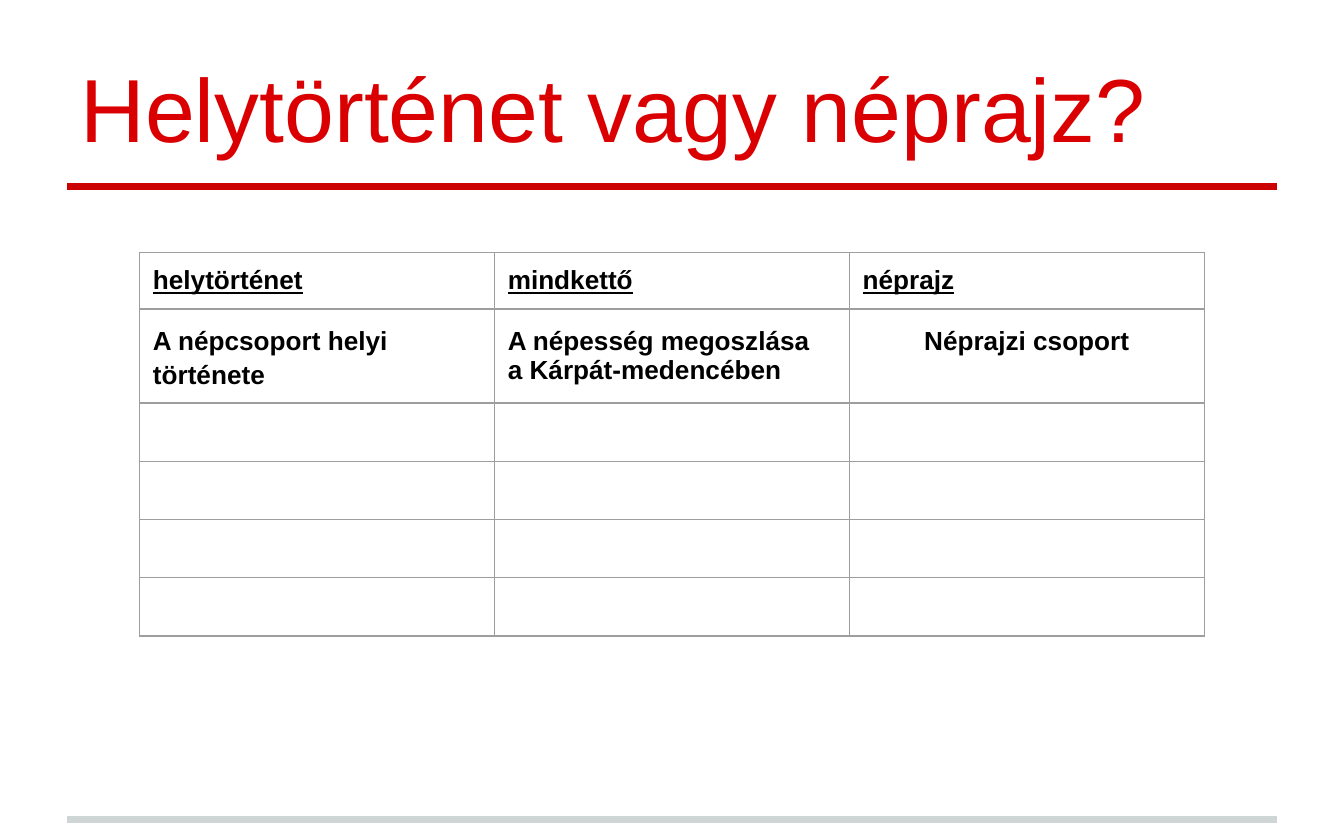
from lxml import etree
from pptx import Presentation
from pptx import util as u
from pptx.dml.color import RGBColor
from pptx.enum import shapes, text
from pptx.oxml import parse_xml
from pptx.oxml.ns import nsdecls, qn

TITLE_RED = RGBColor(0xDA, 0x00, 0x02)
RULE_RED = RGBColor(0xCC, 0x02, 0x02)
RULE_GREY = RGBColor(0xCF, 0xD4, 0xD4)
BORDER_GREY = RGBColor(0x9E, 0x9E, 0x9E)
BLACK = RGBColor(0x00, 0x00, 0x00)
FONT = "Arial"
MARGIN = u.Cm(1.27)
CONTENT_WIDTH = u.Cm(22.86)
PADDING = u.Cm(0.25)
CELL_SIZE = u.Pt(14)
ROW_COUNT = 6
COLUMN_COUNT = 3


def add_text(paragraph, words, size, color, bold=False, underline=False):
    run = paragraph.add_run()
    run.text = words
    run.font.name = FONT
    run.font.size = size
    run.font.color.rgb = color
    run.font.bold = bold
    run.font.underline = underline


def add_borders(cell):
    properties = cell._tc.get_or_add_tcPr()
    for side in ("lnL", "lnR", "lnT", "lnB"):
        properties.append(parse_xml(
            f'<a:{side} {nsdecls("a")} w="{u.Pt(0.75)}"><a:solidFill>'
            f'<a:srgbClr val="{BORDER_GREY}"/></a:solidFill></a:{side}>'))


presentation = Presentation()
presentation.slide_width = u.Cm(25.4)
presentation.slide_height = u.Cm(15.88)
slide = presentation.slides.add_slide(presentation.slide_layouts[5])

for top, color in ((u.Cm(15.49), RULE_GREY), (u.Cm(3.53), RULE_RED)):
    rule = slide.shapes.add_connector(
        shapes.MSO_CONNECTOR.STRAIGHT, MARGIN, top, MARGIN + CONTENT_WIDTH, top)
    rule.line.color.rgb = color
    rule.line.width = u.Pt(4)
    etree.SubElement(rule._element.spPr, qn("a:effectLst"))

title = slide.shapes.title
title.left, title.top = MARGIN, u.Cm(0.64)
title.width, title.height = CONTENT_WIDTH, u.Cm(2.64)
frame = title.text_frame
frame.word_wrap = True
frame.auto_size = text.MSO_AUTO_SIZE.NONE
frame.vertical_anchor = text.MSO_ANCHOR.BOTTOM
frame.margin_left = frame.margin_right = PADDING
frame.margin_top = frame.margin_bottom = PADDING
frame.paragraphs[0].alignment = text.PP_ALIGN.LEFT
add_text(frame.paragraphs[0], "Helytörténet vagy néprajz?", u.Pt(48), TITLE_RED)

row_height = u.Cm(1.06)
table = slide.shapes.add_table(
    ROW_COUNT, COLUMN_COUNT, u.Cm(2.64), u.Cm(4.78),
    u.Cm(20.12), row_height * ROW_COUNT).table
table.first_row = False
table.horz_banding = False
for row in table.rows:
    row.height = row_height

for cell in table.iter_cells():
    cell.margin_left = cell.margin_right = PADDING
    cell.margin_top = cell.margin_bottom = PADDING
    add_borders(cell)
    cell.fill.background()

headings = ["helytörténet", "mindkettő", "néprajz"]
topics = [
    ["A népcsoport helyi története"],
    ["A népesség megoszlása", "a Kárpát-medencében"],
    ["Néprajzi csoport"],
]
for column, (heading, lines) in enumerate(zip(headings, topics)):
    add_text(table.cell(0, column).text_frame.paragraphs[0], heading,
             CELL_SIZE, BLACK, bold=True, underline=True)
    frame = table.cell(1, column).text_frame
    for index, line in enumerate(lines):
        paragraph = frame.add_paragraph() if index else frame.paragraphs[0]
        if index == 0:
            paragraph.line_spacing = 1.15
        add_text(paragraph, line, CELL_SIZE, BLACK, bold=True)
    for row_index in range(2, ROW_COUNT):
        paragraph = table.cell(row_index, column).text_frame.paragraphs[0]
        ending = etree.SubElement(paragraph._p, qn("a:endParaRPr"))
        ending.set("sz", str(int(CELL_SIZE.pt * 100)))
table.cell(1, 2).text_frame.paragraphs[0].alignment = text.PP_ALIGN.CENTER

presentation.save("out.pptx")
